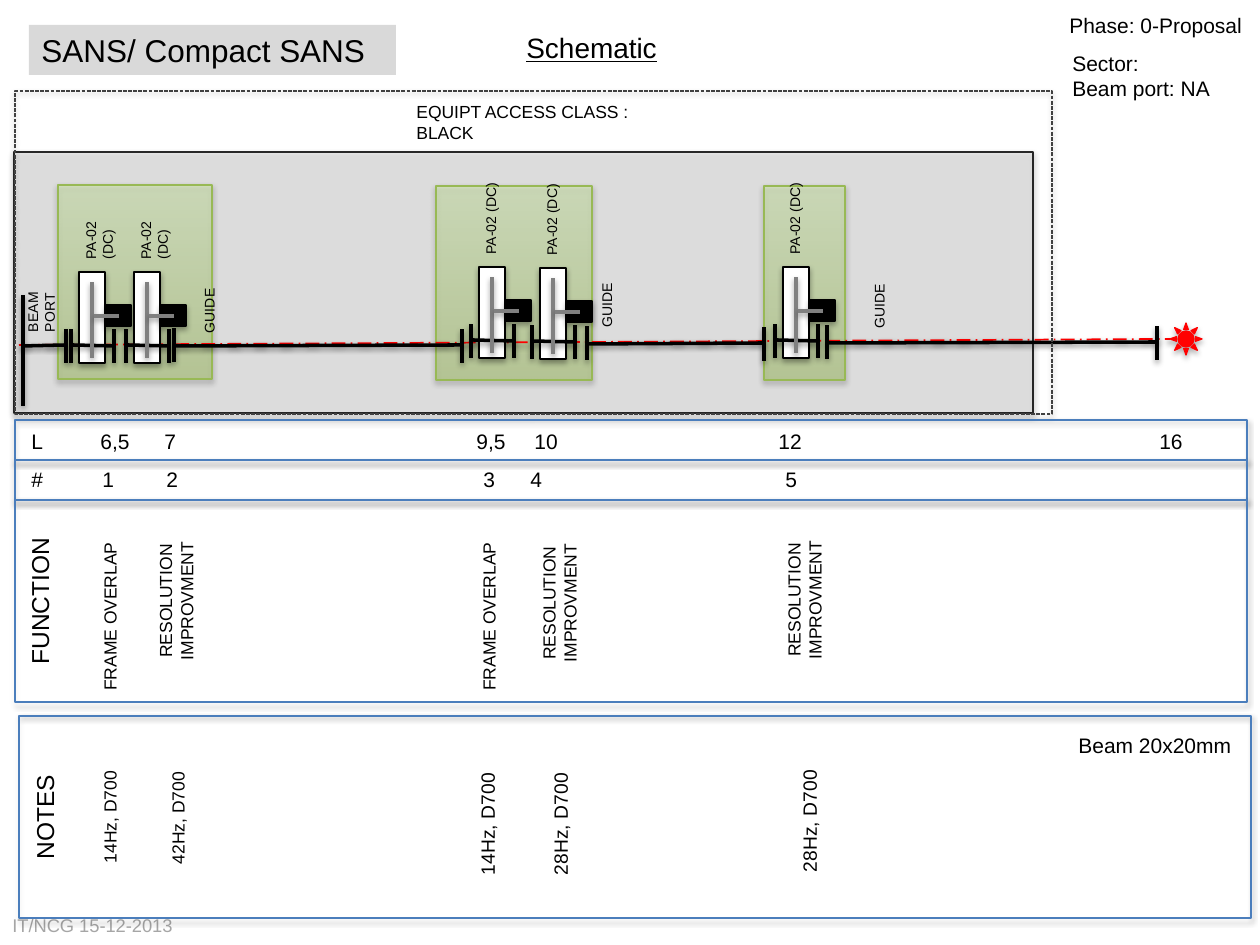
from lxml.etree import SubElement
from pptx import Presentation
from pptx.dml.color import RGBColor
from pptx.enum.dml import MSO_LINE
from pptx.enum.shapes import MSO_CONNECTOR, MSO_SHAPE
from pptx.enum.text import MSO_AUTO_SIZE, PP_ALIGN
from pptx.oxml.ns import qn
from pptx.util import Pt

BLACK = RGBColor(0, 0, 0)
WHITE = RGBColor(255, 255, 255)
RED = RGBColor(255, 0, 0)
GREY = RGBColor(0x80, 0x80, 0x80)
FOOTER_GREY = RGBColor(0xA6, 0xA6, 0xA6)
PALE_GREY = RGBColor(0xD9, 0xD9, 0xD9)
BUNKER_EDGE = RGBColor(0x26, 0x26, 0x26)
DASH_GREY = RGBColor(0x40, 0x40, 0x40)
GREEN = RGBColor(0xA0, 0xCA, 0x4A)
LIGHT_GREEN = RGBColor(0xDA, 0xFF, 0xA5)
GREEN_EDGE = RGBColor(0x98, 0xB9, 0x55)
BLUE = RGBColor(0x4B, 0x7E, 0xBC)

FLANGE_REACH = 17
ROW_WIDTH = 1232


def px(length):
    return round(length * 914400 / 126)


def add_shadow(shape, opacity, distance):
    effects = SubElement(shape.element.spPr, qn("a:effectLst"))
    shadow = SubElement(effects, qn("a:outerShdw"), blurRad="40000", dist=str(distance),
                        dir="5400000", rotWithShape="0")
    color = SubElement(shadow, qn("a:srgbClr"), val="000000")
    SubElement(color, qn("a:alpha"), val=str(opacity * 1000))


def make_translucent(shape):
    for color in shape.element.spPr.iter(qn("a:srgbClr")):
        SubElement(color, qn("a:alpha"), val="36000")


def set_line(shape, color, width, dash=None):
    shape.line.color.rgb = color
    shape.line.width = Pt(width)
    if dash:
        shape.line.dash_style = dash


def add_block(shapes, box, fill, edge, width=0.75, kind=MSO_SHAPE.RECTANGLE, dash=None):
    """A shape with a shadow; fill is None, a colour, or a (colour, colour) gradient."""
    block = shapes.add_shape(kind, *map(px, box))
    if fill is None:
        block.fill.background()
    elif isinstance(fill, RGBColor):
        block.fill.solid()
        block.fill.fore_color.rgb = fill
    else:
        block.fill.gradient()
        block.fill.gradient_angle = 90
        for stop, color in zip(block.fill.gradient_stops, fill):
            stop.color.rgb = color
    if edge == BUNKER_EDGE or isinstance(fill, list):
        make_translucent(block)
    set_line(block, edge, width, dash)
    add_shadow(block, 35, 23000)
    return block


def add_line(shapes, x1, y1, x2, y2, color=BLACK, width=2, dash=None):
    line = shapes.add_connector(MSO_CONNECTOR.STRAIGHT, *map(px, (x1, y1, x2, y2)))
    set_line(line, color, width, dash)
    add_shadow(line, 38, 20000)


def add_text(shapes, box, lines, size, wrap=True, align=None, tabs=(), **extra):
    label = shapes.add_textbox(*map(px, box))
    frame = label.text_frame
    frame.word_wrap = wrap
    frame.auto_size = MSO_AUTO_SIZE.SHAPE_TO_FIT_TEXT
    font_format = {"name": "Arial", "size": Pt(size), **extra}
    color = font_format.pop("color", BLACK)
    for index, line in enumerate(lines.split("\n")):
        para = frame.paragraphs[0] if index == 0 else frame.add_paragraph()
        para.alignment = align
        if tabs:
            stops = SubElement(para._p.get_or_add_pPr(), qn("a:tabLst"))
            for stop in tabs:
                SubElement(stops, qn("a:tab"), pos=str(px(stop)), algn="l")
        span = para.add_run()
        span.text = line
        for name, value in font_format.items():
            setattr(span.font, name, value)
        span.font.color.rgb = color
    return label


def add_upright(shapes, center_x, center_y, length, depth, text, size, **options):
    """Text that reads upwards, centred on a point."""
    box = (center_x - length / 2, center_y - depth / 2, length, depth)
    add_text(shapes, box, text, size, **options).rotation = 270


def add_flange(shapes, x, y):
    add_line(shapes, x, y + FLANGE_REACH, x, y - FLANGE_REACH)


def add_beam_port(page, x, y):
    port = page.shapes.add_group_shape().shapes
    add_upright(port, x + 10, y - 54, 105, 30, "BEAM PORT", 8)
    add_line(port, x, y, x + 43, y - 1)
    add_flange(port, x + 43, y)
    add_line(port, x, y + 60, x, y - 51)


def add_chopper(page, x, top, label_length):
    chopper = page.shapes.add_group_shape().shapes
    add_flange(chopper, x, top + 74)
    add_block(chopper, (x + 8, top, 26, 91), WHITE, BLACK, 1.5)
    add_upright(chopper, x + 20, top - label_length / 2, label_length, 30, "PA-02 (DC)", 8)
    add_line(chopper, x + 1, top + 73, x + 43, top + 74)
    add_flange(chopper, x + 43, top + 74)
    add_line(chopper, x + 21, top + 86, x + 21, top + 10, GREY)
    add_block(chopper, (x + 35, top + 33, 25, 21), BLACK, BLACK)
    add_line(chopper, x + 48, top + 44, x + 23, top + 44, GREY)


def add_guide(page, start, end, y, label):
    guide = page.shapes.add_group_shape().shapes
    add_upright(guide, *label, "GUIDE", 8)
    add_line(guide, start, y, end, y - 1)
    add_flange(guide, start, y - 1)
    add_flange(guide, end, y)


def add_header(page):
    title = add_text(page.shapes, (29, 25, 367, 50), "SANS/ Compact SANS", 18)
    title.fill.solid()
    title.fill.fore_color.rgb = PALE_GREY
    add_text(page.shapes, (514, 24, 158, 47), "Schematic", 16, wrap=False, underline=True)
    add_text(page.shapes, (1057, 6, 200, 38), "Phase: 0-Proposal", 12, wrap=False)
    add_text(page.shapes, (1060, 44, 165, 63), "Sector:\nBeam port: NA", 12, wrap=False)


def add_beamline(page):
    # Bunker, chopper pits, beam axis and sample
    add_block(page.shapes, (14, 152, 1019, 261), PALE_GREY, BUNKER_EDGE)
    for x, y, width in ((764, 186, 81), (436, 186, 156), (58, 185, 154)):
        add_block(page.shapes, (x, y, width, 194), [GREEN, LIGHT_GREEN], GREEN_EDGE)
    add_line(page.shapes, 19, 345, 1170, 339, RED, 1, MSO_LINE.LONG_DASH_DOT)
    add_block(page.shapes, (1170, 323, 32, 32), RED, RED, kind=MSO_SHAPE.SUN)
    # Parts along the beam
    add_beam_port(page, 23, 346)
    for chopper in ((71, 272, 87), (126, 272, 87), (471, 267, 116),
                    (532, 268, 116), (775, 267, 116)):
        add_chopper(page, *chopper)
    add_guide(page, 174, 462, 346, (214, 293, 105, 39))
    add_guide(page, 587, 764, 344, (629, 294, 92, 74))
    add_guide(page, 827, 1157, 343, (871, 305, 72, 13))
    # Access zone
    add_block(page.shapes, (15, 91, 1037, 323), None, DASH_GREY, dash=MSO_LINE.SQUARE_DOT)
    add_text(page.shapes, (404, 95, 244, 34), "EQUIPT ACCESS CLASS : BLACK", 10)


def add_value_row(page, top, text_top, values, stops):
    add_block(page.shapes, (15, top, ROW_WIDTH, 40), None, BLUE)
    add_text(page.shapes, (19, text_top, ROW_WIDTH, 38), "\t".join(values), 12,
             tabs=[stop - 32 for stop in stops])


def add_text_row(page, left, top, heading, heading_x, entries):
    add_block(page.shapes, (left, top, ROW_WIDTH, 202), None, BLUE)
    middle = top + 101
    add_upright(page.shapes, heading_x, middle, 202, 43, heading, 14, align=PP_ALIGN.CENTER)
    for x, shift, length, depth, text, size, options in entries:
        add_upright(page.shapes, x, middle + shift, length, depth, text, size, **options)


def add_rows(page):
    centered, unwrapped = {"align": PP_ALIGN.CENTER}, {"wrap": False}
    overlap, resolution = "FRAME OVERLAP", "RESOLUTION IMPROVMENT"
    add_value_row(page, 420, 422, ("L", "6,5", "7", "9,5", "10", "12", "16"),
                  (101, 165, 477, 535, 779, 1160))
    add_value_row(page, 460, 460, "#12345", (103, 167, 484, 531, 786))
    add_text_row(page, 15, 500, "FUNCTION", 40, (
        (110, 1, 202, 34, overlap, 10, {}),
        (176, 0, 202, 55, resolution, 10, centered),
        (489, 1, 202, 34, overlap, 10, {}),
        (549, 2, 251, 34, resolution, 10, centered),
        (794, -1, 251, 34, resolution, 10, centered)))
    add_text_row(page, 19, 716, "NOTES", 45, (
        (110, 0, 202, 34, "14Hz, D700", 10, centered),
        (178, 1, 202, 34, "42Hz, D700", 10, centered),
        (488, 6, 129, 37, "14Hz, D700", 11, unwrapped),
        (561, 6, 129, 37, "28Hz, D700", 11, unwrapped),
        (810, 3, 129, 37, "28Hz, D700", 11, unwrapped)))
    add_text(page.shapes, (1066, 726, 180, 38), "Beam 20x20mm", 12, wrap=False)


def main():
    deck = Presentation()
    deck.slide_width, deck.slide_height = px(1260), px(945)
    page = deck.slides.add_slide(deck.slide_layouts[6])
    add_text(page.shapes, (0, 908, 189, 35), "IT/NCG 15-12-2013", 10.5, wrap=False,
             color=FOOTER_GREY)
    add_beamline(page)
    add_rows(page)
    add_header(page)
    deck.save("out.pptx")


if __name__ == "__main__":
    main()
